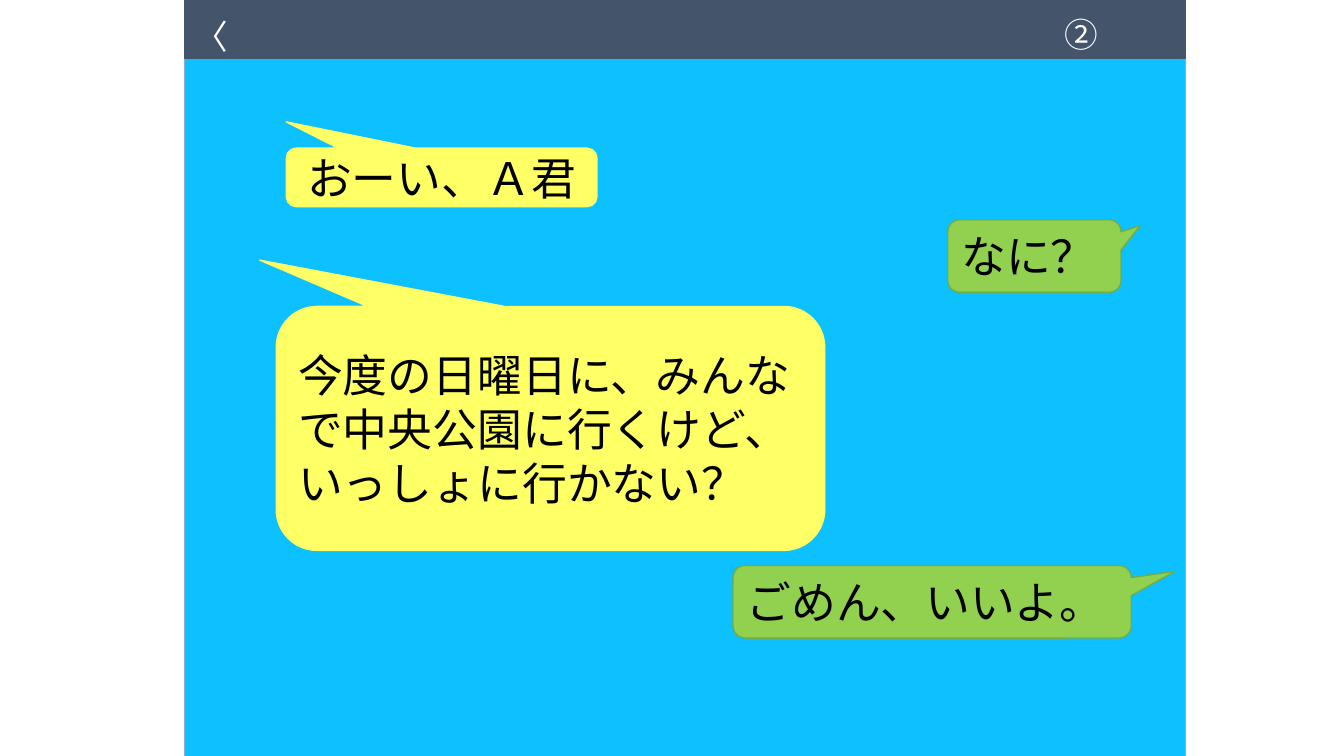
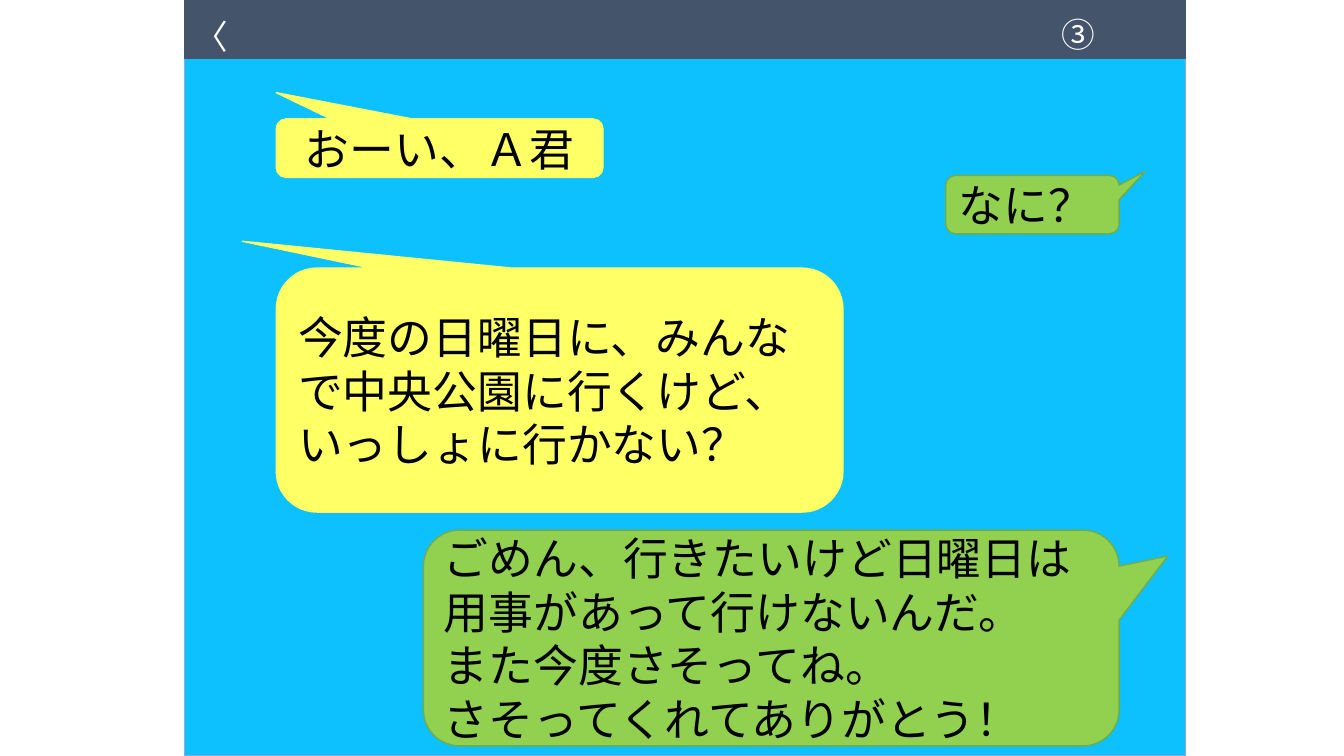
"""Build two chat-screen slides with speech bubbles from two speakers."""
from lxml.etree import SubElement
from pptx import Presentation
from pptx.dml.color import RGBColor
from pptx.enum.shapes import MSO_SHAPE
from pptx.enum.text import MSO_ANCHOR, PP_ALIGN
from pptx.oxml.ns import qn
from pptx.util import Inches, Pt

FONT = "Noto Sans CJK JP"
SKY = RGBColor(0x0D, 0xC0, 0xFF)
SKY_EDGE = RGBColor(0x8F, 0xAA, 0xDC)
SLATE = RGBColor(0x44, 0x54, 0x6A)
YELLOW = RGBColor(0xFF, 0xFF, 0x66)
GREEN = RGBColor(0x92, 0xD0, 0x50)
GREEN_EDGE = RGBColor(0x70, 0xAD, 0x47)
BLACK = RGBColor(0, 0, 0)
WHITE = RGBColor(0xFF, 0xFF, 0xFF)

SLIDE_W, SLIDE_H = 13.33, 7.5
SCREEN_X, SCREEN_W, HEADER_H = 1.83, 9.93, 0.58
CORNER = 0.167
FRIEND = (YELLOW, YELLOW)
ME = (GREEN, GREEN_EDGE)
LEFT, CENTER = PP_ALIGN.LEFT, PP_ALIGN.CENTER

CALL = ["おーい、Ａ君"]
ANSWER = ["なに？"]
INVITATION = ["今度の日曜日に、みんなで中央公園に行くけど、いっしょに行かない？"]
ACCEPTANCE = ["ごめん、いいよ。"]
REFUSAL = [
    "ごめん、行きたいけど日曜日は用事があって行けないんだ。",
    "また今度さそってね。",
    "さそってくれてありがとう！",
]

# Each message: speaker, lines, box, tail tip, alignment
CHATS = [
    {"number": "②", "number_x": 10.46, "screen_y": 0.02, "messages": [
        (FRIEND, CALL, (2.84, 1.47, 3.08, 0.58), (-0.5, -0.95), CENTER),
        (ME, ANSWER, (9.4, 2.18, 1.72, 0.72), (0.61, -0.42), LEFT),
        (FRIEND, INVITATION, (2.74, 3.04, 5.44, 2.42), (-0.53, -0.69), LEFT),
        (ME, ACCEPTANCE, (7.27, 5.61, 3.95, 0.72), (0.61, -0.42), LEFT),
    ]},
    {"number": "③", "number_x": 10.43, "screen_y": 0, "messages": [
        (FRIEND, CALL, (2.74, 1.18, 3.24, 0.58), (-0.5, -0.95), CENTER),
        (ME, ANSWER, (9.38, 1.74, 1.72, 0.58), (0.65, -0.57), LEFT),
        (FRIEND, INVITATION, (2.74, 2.66, 5.62, 2.42), (-0.56, -0.61), LEFT),
        (ME, REFUSAL, (4.2, 5.26, 6.9, 2.14), (0.57, -0.38), LEFT),
    ]},
]


def add_panel(slide, preset, box, fill, edge):
    panel = slide.shapes.add_shape(preset, *map(Inches, box))
    panel.shadow.inherit = False
    panel.fill.solid()
    panel.fill.fore_color.rgb = fill
    panel.line.color.rgb = edge
    panel.line.width = Pt(1)
    return panel


def write(frame, lines, size, color, align=LEFT):
    frame.word_wrap = True
    frame.text = "\n".join(lines)
    for paragraph in frame.paragraphs:
        paragraph.alignment = align
        font = paragraph.font
        font.name, font.size, font.color.rgb = FONT, Pt(size), color
        properties = paragraph._p.pPr.find(qn("a:defRPr"))
        SubElement(properties, qn("a:ea")).set("typeface", FONT)


def add_bubble(slide, speaker, lines, box, tip, align):
    bubble = add_panel(slide, MSO_SHAPE.ROUNDED_RECTANGULAR_CALLOUT, box, *speaker)
    for index, value in enumerate((*tip, CORNER)):
        bubble.adjustments[index] = value
    bubble.text_frame.vertical_anchor = MSO_ANCHOR.MIDDLE
    write(bubble.text_frame, lines, 32, BLACK, align)


def add_header_label(slide, label, x, y):
    label_box = slide.shapes.add_textbox(*map(Inches, (x, y, 1.2, 0.5)))
    write(label_box.text_frame, [label], 24, WHITE)


def add_chat(deck, chat):
    slide = deck.slides.add_slide(deck.slide_layouts[6])
    screen = (SCREEN_X, chat["screen_y"], SCREEN_W, SLIDE_H)
    header = (SCREEN_X, 0, SCREEN_W, HEADER_H)
    add_panel(slide, MSO_SHAPE.RECTANGLE, screen, SKY, SKY_EDGE)
    add_panel(slide, MSO_SHAPE.RECTANGLE, header, SLATE, SLATE)
    for message in chat["messages"]:
        add_bubble(slide, *message)
    add_header_label(slide, "〈", SCREEN_X, 0.11)
    add_header_label(slide, chat["number"], chat["number_x"], 0.09)


def main():
    deck = Presentation()
    deck.slide_width, deck.slide_height = Inches(SLIDE_W), Inches(SLIDE_H)
    for chat in CHATS:
        add_chat(deck, chat)
    deck.save("out.pptx")


if __name__ == "__main__":
    main()
